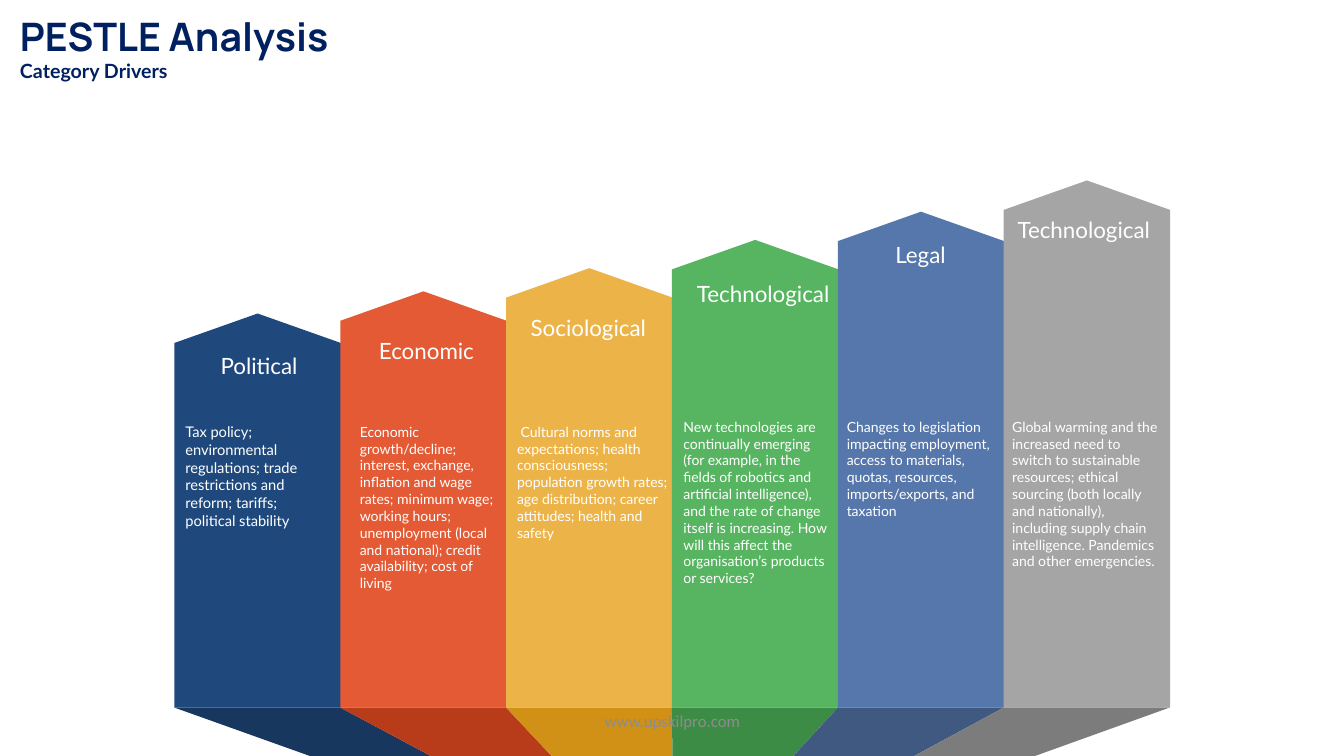
from pptx import Presentation
from pptx.dml.color import RGBColor
from pptx.enum.shapes import MSO_SHAPE as Shape
from pptx.enum.text import MSO_ANCHOR as Anchor, MSO_AUTO_SIZE as AutoSize, PP_ALIGN as Align
from pptx.util import Inches, Pt

WHITE = RGBColor(0xFF, 0xFF, 0xFF)
NAVY = RGBColor(0x00, 0x20, 0x60)
FOOTER_GREY = RGBColor(0x8C, 0x8C, 0x8C)

BAR_LEFT, BAR_RIGHT, BAR_BOTTOM = 1.73, 11.6, 7.02
BAR_WIDTH = 1.65
FLOOR_LEFT, FLOOR_STEP, FLOOR_BOTTOM = 3.13, 1.18, 7.52

# Bar height, bar colour, floor colour, heading and its box, drivers with size and box
CATEGORIES = [
    (3.91, RGBColor(0x1F, 0x49, 0x7D), RGBColor(0x17, 0x37, 0x5E),
     "Political", (2.09, 3.44, 0.96, 0.37),
     "Tax policy; environmental regulations; trade restrictions and reform; "
     "tariffs; political stability", 10.5, (1.74, 4.15, 1.61, 1.16)),
    (4.13, RGBColor(0xE3, 0x5A, 0x35), RGBColor(0xB8, 0x3B, 0x1A),
     "Economic", (3.65, 3.3, 1.16, 0.37),
     "Economic growth/decline; interest, exchange, inflation and wage rates; "
     "minimum wage; working hours; unemployment (local and national); credit "
     "availability; cost of living", 10, (3.47, 4.15, 1.61, 1.78)),
    (4.36, RGBColor(0xEC, 0xB4, 0x48), RGBColor(0xD1, 0x91, 0x16),
     "Sociological", (5.14, 3.07, 1.39, 0.37),
     " Cultural norms and expectations; health consciousness; population growth "
     "rates; age distribution; career attitudes; health and safety",
     10, (5.03, 4.15, 1.7, 1.28)),
    (4.64, RGBColor(0x57, 0xB5, 0x61), RGBColor(0x3D, 0x8C, 0x46),
     "Technological", (6.8, 2.73, 1.54, 0.37),
     "New technologies are continually emerging (for example, in the fields of "
     "robotics and artificial intelligence), and the rate of change itself is "
     "increasing. How will this affect the organisation’s products or services?",
     10, (6.68, 4.1, 1.67, 1.78)),
    (4.92, RGBColor(0x56, 0x77, 0xAB), RGBColor(0x40, 0x59, 0x81),
     "Legal", (8.77, 2.34, 0.72, 0.37),
     "Changes to legislation impacting employment, access to materials, quotas, "
     "resources, imports/exports, and taxation", 10, (8.3, 4.1, 1.75, 1.11)),
    (5.23, RGBColor(0xA5, 0xA5, 0xA5), RGBColor(0x7C, 0x7C, 0x7C),
     "Technological", (9.98, 2.1, 1.54, 0.37),
     "Global warming and the increased need to switch to sustainable resources; "
     "ethical sourcing (both locally and nationally), including supply chain "
     "intelligence. Pandemics and other emergencies.", 10, (9.94, 4.1, 1.65, 1.95)),
]

presentation = Presentation()
presentation.slide_width, presentation.slide_height = Inches(13.33), Inches(7.5)
slide = presentation.slides.add_slide(presentation.slide_layouts[6])


def paint(shape, color):
    shape.shadow.inherit = False
    shape.fill.solid()
    shape.fill.fore_color.rgb = color
    shape.line.fill.background()


def add_text(box, lines, color, align=Align.LEFT, wrap=True):
    """Add a text box; each line is (text, size, font, bold)."""
    frame = slide.shapes.add_textbox(*map(Inches, box)).text_frame
    frame.word_wrap = wrap
    frame.auto_size = AutoSize.SHAPE_TO_FIT_TEXT
    for index, (text, size, font, bold) in enumerate(lines):
        paragraph = frame.add_paragraph() if index else frame.paragraphs[0]
        paragraph.alignment = align
        run = paragraph.add_run()
        run.text = text
        run.font.size, run.font.name, run.font.bold = Pt(size), font, bold
        run.font.color.rgb = color
    return frame


# Pointed bars and the floor segments that narrow below them
pitch = (BAR_RIGHT - BAR_LEFT) / len(CATEGORIES)
for index, (height, bar_color, floor_color, *_) in enumerate(CATEGORIES):
    left = BAR_LEFT + index * pitch
    middle_x, middle_y = left + BAR_WIDTH / 2, BAR_BOTTOM - height / 2
    bar = slide.shapes.add_shape(
        Shape.PENTAGON, Inches(middle_x - height / 2), Inches(middle_y - BAR_WIDTH / 2),
        Inches(height), Inches(BAR_WIDTH))
    bar.rotation = 270
    bar.adjustments[0] = 0.177
    paint(bar, bar_color)

    floor_left = FLOOR_LEFT + index * FLOOR_STEP
    corners = [(left, BAR_BOTTOM), (left + pitch, BAR_BOTTOM),
               (floor_left + FLOOR_STEP, FLOOR_BOTTOM), (floor_left, FLOOR_BOTTOM)]
    points = [(Inches(x), Inches(y)) for x, y in corners]
    builder = slide.shapes.build_freeform(*points[0])
    builder.add_line_segments(points[1:], close=True)
    paint(builder.convert_to_shape(), floor_color)

# Headings and drivers
for _, _, _, heading, heading_box, drivers, size, drivers_box in CATEGORIES:
    add_text(heading_box, [(heading, 16, "Lato", False)], WHITE, Align.CENTER, wrap=False)
    add_text(drivers_box, [(drivers, size, "Lato", False)], WHITE)

# Footer
footer = add_text((4.42, 6.95, 4.5, 0.4), [("www.upskilpro.com", 12, "Calibri", False)],
                  FOOTER_GREY, Align.CENTER)
footer.auto_size = AutoSize.NONE
footer.vertical_anchor = Anchor.MIDDLE

# Title
add_text((0.1, 0.07, 10.53, 0.81),
         [("PESTLE Analysis", 28, "Manrope", True), ("Category Drivers", 14, "Lato", True)], NAVY)

presentation.save("out.pptx")
